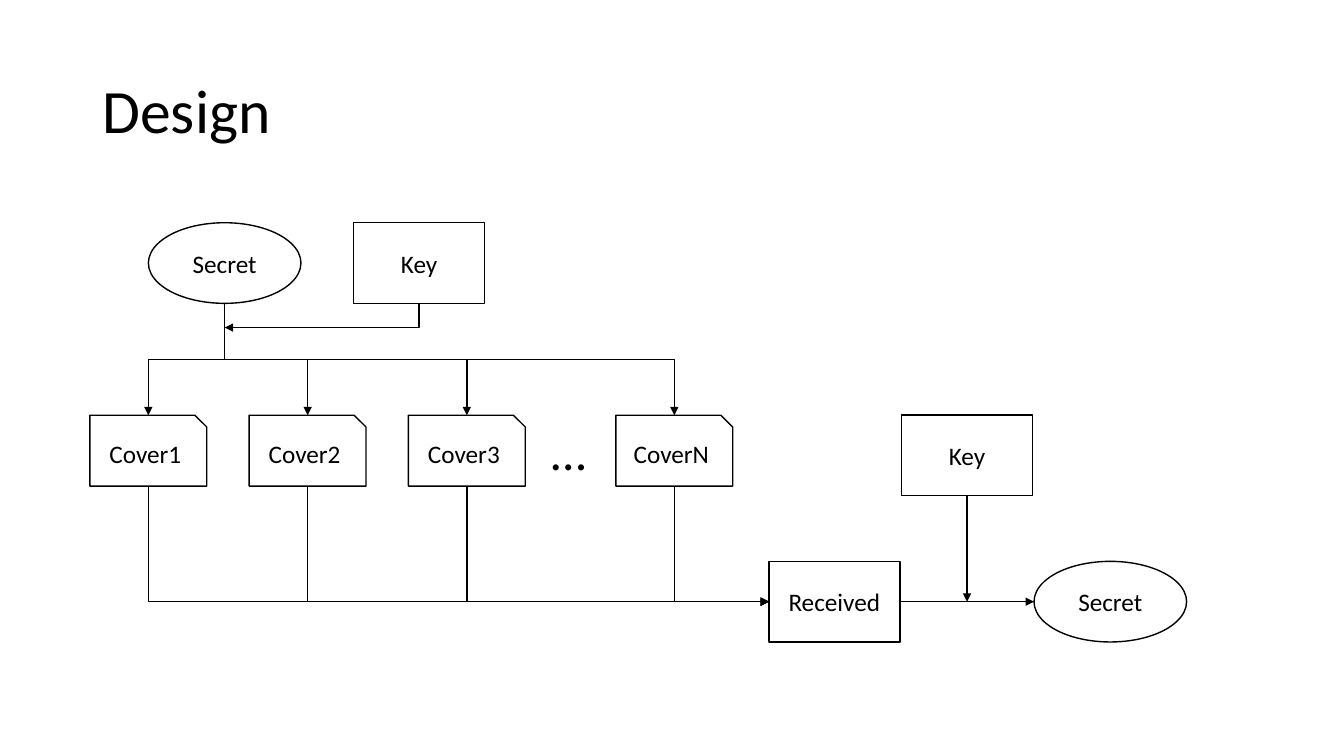
from dataclasses import dataclass

from lxml.etree import SubElement
from pptx import Presentation
from pptx.dml.color import RGBColor
from pptx.enum.shapes import MSO_CONNECTOR as Line, MSO_SHAPE as Preset
from pptx.enum.text import MSO_ANCHOR as Anchor, PP_ALIGN as Align
from pptx.oxml.ns import qn
from pptx.util import Pt

COLORS = {"ink": "000000", "paper": "FFFFFF"}
FONT = "Calibri"
TITLE_ONLY = 5
# Connection sites: top, left, bottom, right on boxes and cards
TOP, LEFT, BOTTOM, RIGHT = range(4)
OVAL_LEFT, OVAL_BOTTOM = 2, 4


@dataclass(frozen=True)
class Node:
    text: str
    preset: Preset
    left: float
    top: float
    width: float
    height: float

    @property
    def center(self) -> float:
        return self.left + self.width / 2

    @property
    def middle(self) -> float:
        return self.top + self.height / 2

    @property
    def right(self) -> float:
        return self.left + self.width

    @property
    def bottom(self) -> float:
        return self.top + self.height


def oval(text: str, left: float, top: float) -> Node:
    return Node(text, Preset.OVAL, left, top, 109, 57.6)


def box(text: str, left: float, top: float) -> Node:
    return Node(text, Preset.RECTANGLE, left, top, 93.6, 57.6)


def card(text: str, left: float) -> Node:
    return Node(text, Preset.SNIP_1_RECTANGLE, left, COVER_TOP, 83.5, 50.6)


def color(name: str) -> RGBColor:
    return RGBColor.from_string(COLORS[name])


def write(frame, text: str, size: float = 18, align: Align = Align.LEFT,
          anchor: Anchor = Anchor.MIDDLE, spacing: float = 1.0, wrap: bool = True) -> None:
    frame.word_wrap = wrap
    frame.vertical_anchor = anchor
    paragraph = frame.paragraphs[0]
    paragraph.alignment = align
    paragraph.line_spacing = spacing
    run = paragraph.add_run()
    run.text = text
    run.font.name = FONT
    run.font.size = Pt(size)
    run.font.color.rgb = color("ink")


def draw_node(slide, node: Node):
    shape = slide.shapes.add_shape(node.preset, Pt(node.left), Pt(node.top),
                                   Pt(node.width), Pt(node.height))
    shape.shadow.inherit = False
    shape.fill.solid()
    shape.fill.fore_color.rgb = color("paper")
    shape.line.color.rgb = color("ink")
    shape.line.width = Pt(1)
    write(shape.text_frame, node.text, align=Align.CENTER)
    return shape


def draw_arrow(slide, start: tuple, end: tuple, preset: str = "",
               source: tuple | None = None, target: tuple | None = None) -> None:
    """Draw an arrow; with a bent preset it leaves its start downwards."""
    (x1, y1), (x2, y2) = start, end
    kind = Line.ELBOW if preset else Line.STRAIGHT
    connector = slide.shapes.add_connector(kind, Pt(x1), Pt(y1), Pt(x2), Pt(y2))
    connector.line.color.rgb = color("ink")
    connector.line.width = Pt(1)
    properties = connector._element.spPr
    SubElement(connector.line._get_or_add_ln(), qn("a:tailEnd"), type="triangle")
    SubElement(properties, qn("a:effectLst"))

    # Turn the bent preset a quarter, mirrored when it heads right
    if preset:
        width, height = y2 - y1, abs(x2 - x1)
        transform = properties.find(qn("a:xfrm"))
        for name in ("flipH", "flipV"):
            transform.attrib.pop(name, None)
        transform.set("rot", str((90 if x2 < x1 else 270) * 60000))
        if x2 > x1:
            transform.set("flipH", "1")
        connector.left = Pt((x1 + x2 - width) / 2)
        connector.top = Pt((y1 + y2 - height) / 2)
        connector.width, connector.height = Pt(width), Pt(height)
        properties.find(qn("a:prstGeom")).set("prst", preset)

    # Glue the ends to their shapes
    links = connector._element.find(f"{qn('p:nvCxnSpPr')}/{qn('p:cNvCxnSpPr')}")
    for tag, link in (("a:stCxn", source), ("a:endCxn", target)):
        if link:
            shape, site = link
            SubElement(links, qn(tag), id=str(shape.shape_id), idx=str(site))


COVER_TOP = 296.6
TOP_ROW, BOTTOM_ROW = 159.1, 401
SECRET_IN, KEY_IN = oval("Secret", 106, TOP_ROW), box("Key", 252.6, TOP_ROW)
COVERS = [card(f"Cover{i + 1}", 64.2 + 113.76 * i) for i in range(3)] + [card("CoverN", 439.9)]
RECEIVED, SECRET_OUT = box("Received", 549.2, BOTTOM_ROW), oval("Secret", 738.6, BOTTOM_ROW)
KEY_OUT = box("Key", 644, COVER_TOP)


def main() -> None:
    presentation = Presentation()
    presentation.slide_width, presentation.slide_height = Pt(960), Pt(540)
    slide = presentation.slides.add_slide(presentation.slide_layouts[TITLE_ONLY])

    # Title
    title = slide.shapes.title
    title.left, title.top, title.width, title.height = Pt(66), Pt(28.8), Pt(828), Pt(104.4)
    write(title.text_frame, "Design", size=44, spacing=0.9)

    # Nodes
    secret_in, key_in, received, secret_out, key_out = (
        draw_node(slide, node) for node in (SECRET_IN, KEY_IN, RECEIVED, SECRET_OUT, KEY_OUT))

    # Covers, each fed by the secret and sent on to the receiver
    for cover in COVERS:
        shape = draw_node(slide, cover)
        draw_arrow(slide, (SECRET_IN.center, SECRET_IN.bottom), (cover.center, cover.top),
                   "bentConnector3", (secret_in, OVAL_BOTTOM), (shape, TOP))
        draw_arrow(slide, (cover.center, cover.bottom), (RECEIVED.left, RECEIVED.middle),
                   "bentConnector2", (shape, BOTTOM), (received, LEFT))

    # Keys joining the flow, and the recovered secret
    draw_arrow(slide, (KEY_IN.center, KEY_IN.bottom), (SECRET_IN.center, 234),
               "bentConnector2", (key_in, BOTTOM))
    draw_arrow(slide, (RECEIVED.right, RECEIVED.middle), (SECRET_OUT.left, SECRET_OUT.middle),
               source=(received, RIGHT), target=(secret_out, OVAL_LEFT))
    draw_arrow(slide, (KEY_OUT.center, KEY_OUT.bottom), (KEY_OUT.center, RECEIVED.middle),
               source=(key_out, BOTTOM))

    # Ellipsis between the third and the last cover
    dots = slide.shapes.add_textbox(Pt(386.6), Pt(COVER_TOP), Pt(42.5), Pt(51))
    write(dots.text_frame, "…", size=36, anchor=Anchor.TOP, wrap=False)

    presentation.save("out.pptx")


if __name__ == "__main__":
    main()
